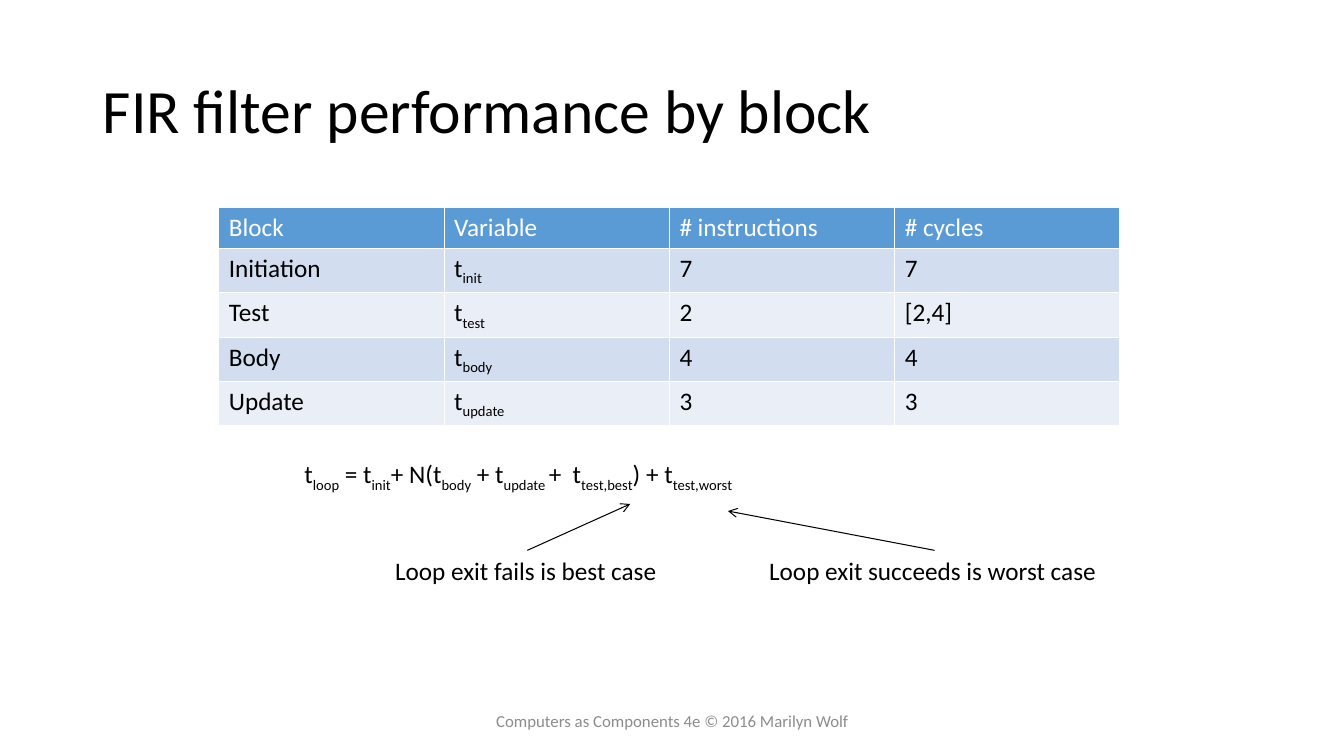
"""Build the slide on FIR filter performance by block."""
from dataclasses import dataclass

from lxml import etree
from pptx import Presentation
from pptx.dml.color import RGBColor
from pptx.enum.shapes import MSO_CONNECTOR
from pptx.enum.text import MSO_ANCHOR, MSO_AUTO_SIZE, PP_ALIGN
from pptx.oxml.ns import qn
from pptx.util import Inches, Pt

LEFT, CENTER = PP_ALIGN.LEFT, PP_ALIGN.CENTER
MIDDLE = MSO_ANCHOR.MIDDLE
FIT = MSO_AUTO_SIZE.SHAPE_TO_FIT_TEXT
STRAIGHT = MSO_CONNECTOR.STRAIGHT
TITLE_ONLY = 5
TOP = 0

TITLE = "FIR filter performance by block"
HEADS = ["Block", "Variable", "# instructions", "# cycles"]
BLOCKS = [
    ("Initiation", "init", "7", "7"),
    ("Test", "test", "2", "[2,4]"),
    ("Body", "body", "4", "4"),
    ("Update", "update", "3", "3"),
]
LOOP_TIME = [
    "t", "loop", " = t", "init", "+ N(t", "body", " + t", "update ",
    "+  t", "test,best", ") + t", "test,worst",
]
CASES = [
    ("Loop exit fails is best case", (3.82, 5.46, 2.82, 0.4), (6.25, 5)),
    ("Loop exit succeeds is worst case", (7.53, 5.46, 3.48, 0.4), (7.22, 5.07)),
]
FOOTER = "Computers as Components 4e © 2016 Marilyn Wolf"

TITLE_BOX = (0.92, 0.4, 11.5, 1.45)
TABLE_BOX = (2.17, 2.06, 8.94, 2.03)
LOOP_BOX = (2.92, 4.5, 4.91, 0.4)
FOOTER_BOX = (4.42, 6.95, 4.5, 0.4)


@dataclass(frozen=True)
class Theme:
    """Colours, font and type sizes."""
    font: str = "Calibri"
    ink: RGBColor = RGBColor(0, 0, 0)
    paper: RGBColor = RGBColor(255, 255, 255)
    gray: RGBColor = RGBColor(0x8C, 0x8C, 0x8C)
    head: RGBColor = RGBColor(0x5B, 0x9B, 0xD5)
    bands: tuple = (RGBColor(0xD2, 0xDE, 0xEF), RGBColor(0xEA, 0xEF, 0xF7))
    title: int = 44
    body: int = 18
    small: int = 12
    line: float = 0.75


THEME = Theme()


def write(frame, parts, size=THEME.body, color=THEME.ink, align=LEFT):
    """Write runs into a frame, every second one as a subscript."""
    para = frame.paragraphs[0]
    para.alignment = align
    for index, part in enumerate(parts):
        run = para.add_run()
        run.text = part
        font = run.font
        font.name, font.size, font.bold = THEME.font, Pt(size), False
        font.color.rgb = color
        if index % 2:
            run._r.get_or_add_rPr().set("baseline", "-25000")
    return para


def add_label(slide, box, parts):
    """Add a text box that fits its one line of text."""
    label = slide.shapes.add_textbox(*map(Inches, box))
    label.text_frame.word_wrap = False
    label.text_frame.auto_size = FIT
    write(label.text_frame, parts)
    return label


def add_arrow(slide, label, tip):
    """Draw an arrow from the top of a label to a tip."""
    end_x, end_y = map(Inches, tip)
    arrow = slide.shapes.add_connector(
        STRAIGHT, label.left + label.width // 2, label.top, end_x, end_y)
    arrow.begin_connect(label, TOP)
    arrow.line.color.rgb = THEME.ink
    arrow.line.width = Pt(THEME.line)
    etree.SubElement(arrow.line._get_or_add_ln(), qn("a:tailEnd"), type="arrow")
    etree.SubElement(arrow._element.spPr, qn("a:effectLst"))


def add_blocks(slide):
    """Add the table of blocks."""
    rows = [[[head] for head in HEADS]]
    rows += [[[name], ["t", sub], [count], [cycles]]
             for name, sub, count, cycles in BLOCKS]
    table = slide.shapes.add_table(
        len(rows), len(HEADS), *map(Inches, TABLE_BOX)).table
    for r, row in enumerate(rows):
        fill = THEME.bands[(r - 1) % 2] if r else THEME.head
        color = THEME.ink if r else THEME.paper
        for c, parts in enumerate(row):
            cell = table.cell(r, c)
            cell.fill.solid()
            cell.fill.fore_color.rgb = fill
            write(cell.text_frame, parts, color=color)


def main():
    """Build and save the slide."""
    deck = Presentation()
    deck.slide_width, deck.slide_height = Inches(13.33), Inches(7.5)
    slide = deck.slides.add_slide(deck.slide_layouts[TITLE_ONLY])

    title = slide.shapes.title
    title.left, title.top, title.width, title.height = map(Inches, TITLE_BOX)
    title.text_frame.vertical_anchor = MIDDLE
    write(title.text_frame, [TITLE], THEME.title).line_spacing = 0.9

    add_blocks(slide)
    add_label(slide, LOOP_BOX, LOOP_TIME)
    for text, box, tip in CASES:
        add_arrow(slide, add_label(slide, box, [text]), tip)

    footer = slide.shapes.add_textbox(*map(Inches, FOOTER_BOX)).text_frame
    footer.word_wrap = True
    footer.vertical_anchor = MIDDLE
    write(footer, [FOOTER], THEME.small, THEME.gray, CENTER)
    deck.save("out.pptx")


if __name__ == "__main__":
    main()
